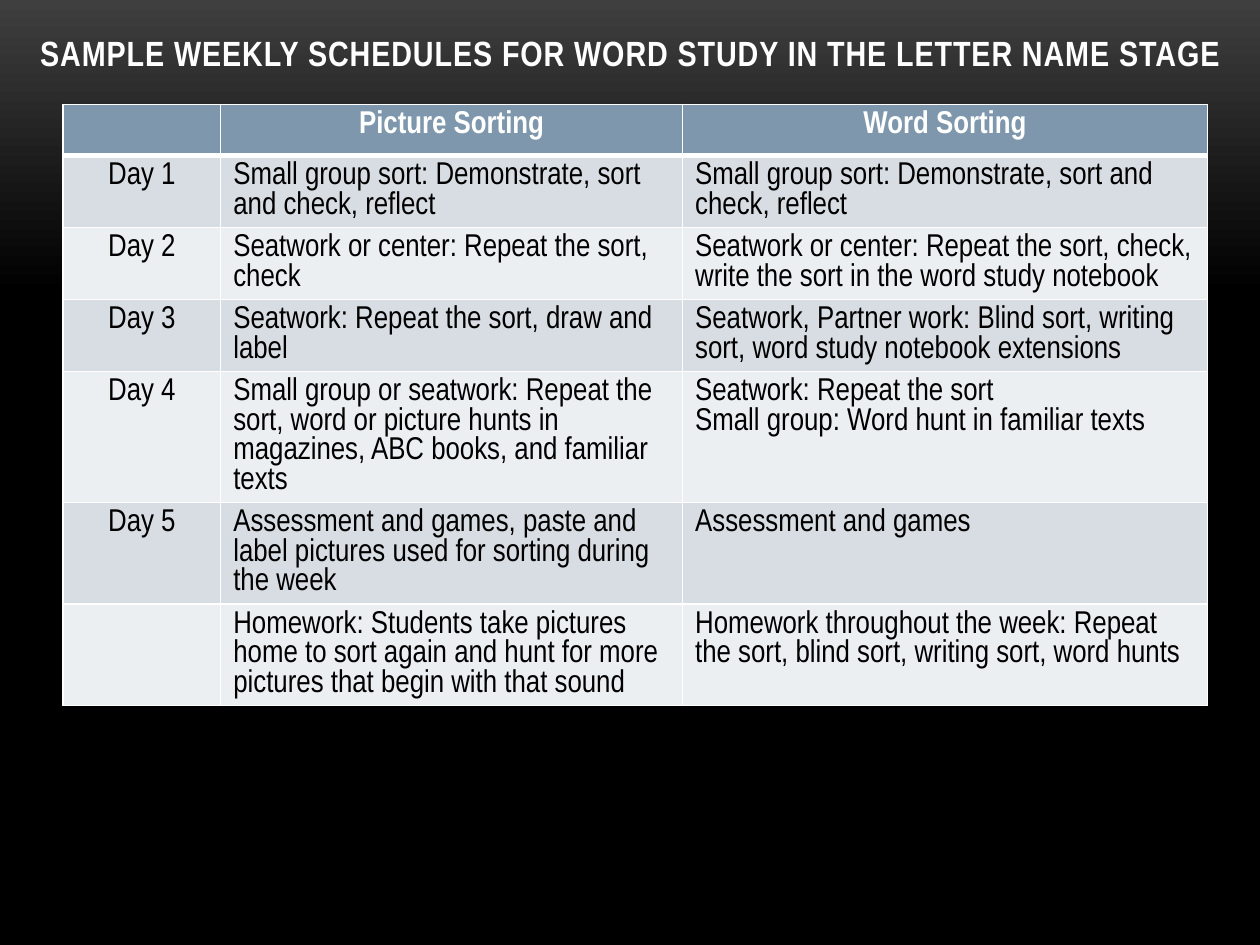
"""Build a slide with a weekly word study schedule."""
from lxml import etree
from pptx import Presentation
from pptx.dml.color import RGBColor
from pptx.enum.text import MSO_ANCHOR, MSO_AUTO_SIZE, PP_ALIGN
from pptx.oxml.ns import qn
from pptx.util import Cm, Pt

BOTTOM = MSO_ANCHOR.BOTTOM
FIXED = MSO_AUTO_SIZE.NONE
LEFT, CENTER = PP_ALIGN.LEFT, PP_ALIGN.CENTER
FONT = "Arial Narrow"
COLORS = {"white": "FFFFFF", "black": "000000", "glow": "3F3F3F",
          "head": "7E97AD", "odd": "D8DDE3", "even": "ECEFF1"}
TITLE = "SAMPLE WEEKLY SCHEDULES FOR WORD STUDY IN THE LETTER NAME STAGE"
ROWS = [
    ("", "Picture Sorting", "Word Sorting"),
    ("Day 1", "Small group sort: Demonstrate, sort and check, reflect",
     "Small group sort: Demonstrate, sort and check, reflect"),
    ("Day 2", "Seatwork or center: Repeat the sort, check",
     "Seatwork or center: Repeat the sort, check, write the sort in the "
     "word study notebook"),
    ("Day 3", "Seatwork: Repeat the sort, draw and label",
     "Seatwork, Partner work: Blind sort, writing sort, word study "
     "notebook extensions"),
    ("Day 4", "Small group or seatwork: Repeat the sort, word or picture "
     "hunts in magazines, ABC books, and familiar texts",
     "Seatwork: Repeat the sort\nSmall group: Word hunt in familiar texts"),
    ("Day 5", "Assessment and games, paste and label pictures used for "
     "sorting during the week", "Assessment and games"),
    ("", "Homework: Students take pictures home to sort again and hunt for "
     "more pictures that begin with that sound",
     "Homework throughout the week: Repeat the sort, blind sort, writing "
     "sort, word hunts"),
]


def color(name):
    """Return the named colour."""
    return RGBColor.from_string(COLORS[name])


class Deck:
    """Hold the style and the current slide."""

    def __init__(self):
        """Open a deck with one title slide."""
        self.prs = Presentation()
        self.prs.slide_width, self.prs.slide_height = Cm(25.4), Cm(19.05)
        self.slide = self.prs.slides.add_slide(self.prs.slide_layouts[5])

    def backdrop(self, stops):
        """Fill the background from top to bottom."""
        fill = self.slide.background.fill
        fill.gradient()
        fill.gradient_angle = 270
        for stop, (place, name) in zip(fill.gradient_stops, stops):
            stop.position = place
            stop.color.rgb = color(name)

    def text(self, frame, words, size, tint, bold, align):
        """Set each line of words as a paragraph with one run."""
        for i, line in enumerate(words.split("\n")):
            para = frame.add_paragraph() if i else frame.paragraphs[0]
            para.alignment = align
            run = para.add_run()
            run.text = line
            font = run.font
            font.name, font.size, font.bold = FONT, Pt(size), bold
            font.color.rgb = color(tint)

    def title(self, words, box):
        """Place the title."""
        shape = self.slide.shapes.title
        shape.left, shape.top, shape.width, shape.height = map(Cm, box)
        frame = shape.text_frame
        frame.word_wrap, frame.auto_size = True, FIXED
        frame.vertical_anchor = BOTTOM
        self.text(frame, words, 20, "white", True, CENTER)
        run = frame.paragraphs[0].runs[0]
        run._r.get_or_add_rPr().set("spc", "50")

    def border(self, cell, row):
        """Rule a cell in white, heavier under the header."""
        props = cell._tc.get_or_add_tcPr()
        wide = {(0, "B"), (1, "T")}
        for side in "LRTB":
            width = Pt(3 if (row, side) in wide else 1)
            line = etree.SubElement(props, qn(f"a:ln{side}"), w=str(width))
            fill = etree.SubElement(line, qn("a:solidFill"))
            etree.SubElement(fill, qn("a:srgbClr"), val=COLORS["white"])

    def table(self, rows, left, top, widths, height):
        """Draw a banded table with a header row."""
        grid = self.slide.shapes.add_table(
            len(rows), len(widths), Cm(left), Cm(top),
            Cm(sum(widths)), Cm(height * len(rows))).table
        for col, width in zip(grid.columns, widths):
            col.width = Cm(width)
        for r, row in enumerate(rows):
            head = r == 0
            band = "head" if head else "odd" if r % 2 else "even"
            for c, words in enumerate(row):
                cell = grid.cell(r, c)
                self.border(cell, r)
                cell.fill.solid()
                cell.fill.fore_color.rgb = color(band)
                if words:
                    self.text(cell.text_frame, words, 18,
                              "white" if head else "black", head,
                              CENTER if head or c == 0 else LEFT)


def main():
    """Build and save the slide."""
    deck = Deck()
    deck.backdrop([(0, "glow"), (0.31, "black")])
    deck.title(TITLE, (0.43, -1.57, 24.56, 3.18))
    deck.table(ROWS, 1.27, 2.11, (3.18, 9.31, 10.58), 1.03)
    deck.prs.save("out.pptx")


if __name__ == "__main__":
    main()
